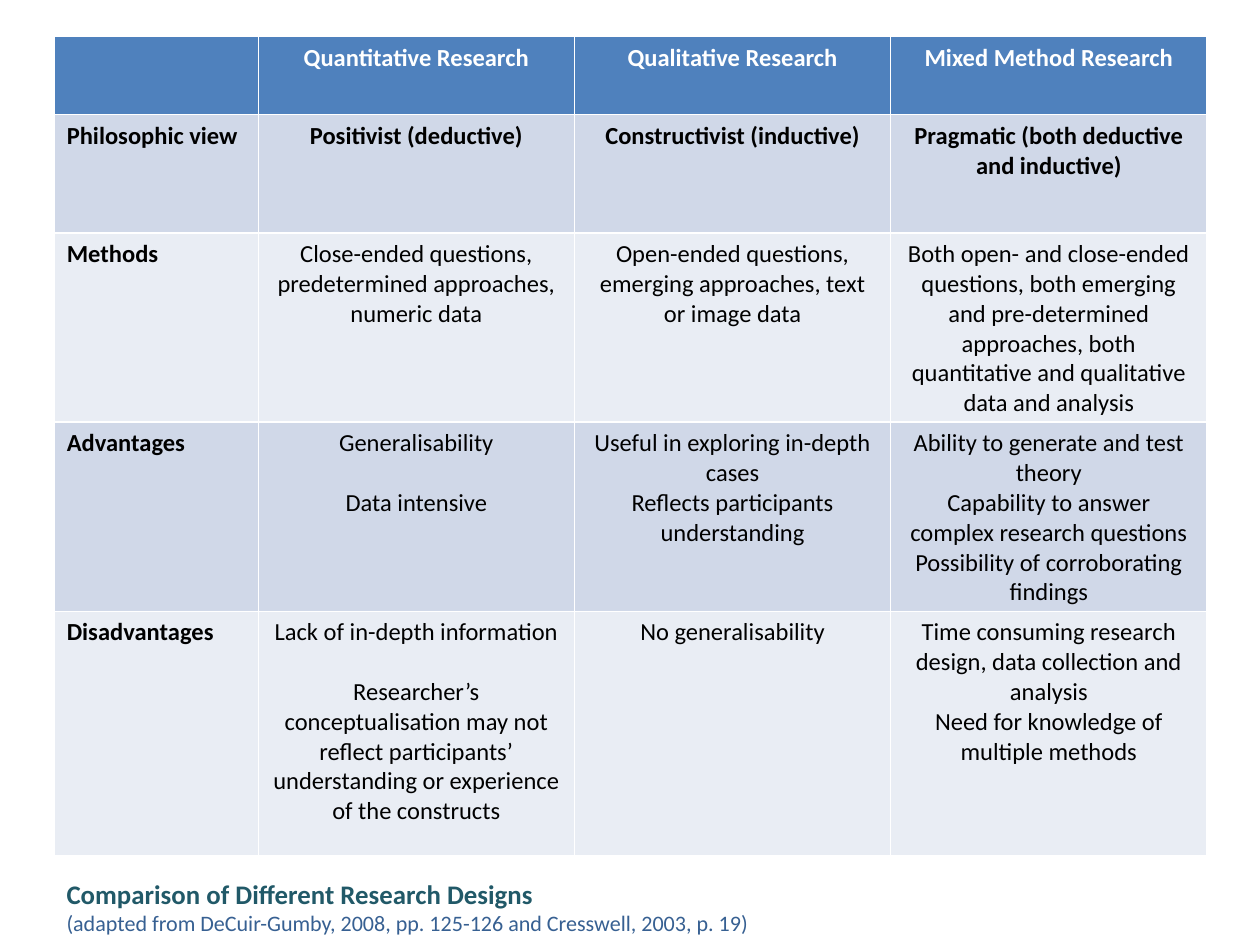
from pptx import Presentation
from pptx.dml.color import RGBColor
from pptx.enum.text import MSO_ANCHOR, PP_ALIGN
from pptx.util import Inches, Pt

HEADER_BLUE = RGBColor(0x4F, 0x81, 0xBD)
BAND_DARK = RGBColor(0xD0, 0xD8, 0xE8)
BAND_LIGHT = RGBColor(0xE9, 0xED, 0xF4)
WHITE = RGBColor(0xFF, 0xFF, 0xFF)
BLACK = RGBColor(0x00, 0x00, 0x00)
TITLE_TEAL = RGBColor(0x21, 0x59, 0x68)
SOURCE_BLUE = RGBColor(0x37, 0x60, 0x92)

LEFT = 0.43
TABLE_TOP = 0.29
COLUMN_WIDTHS = [1.62, 2.51, 2.51, 2.51]
ROW_HEIGHTS = [0.62, 0.94, 1.48, 1.48, 1.94]
LINE_GAP = 17  # points, one line of table text

# Each cell is a list of paragraphs.
COMPARISON = [
    [[], ["Quantitative Research"], ["Qualitative Research"], ["Mixed Method Research"]],
    [["Philosophic view"], ["Positivist (deductive)"], ["Constructivist (inductive)"],
     ["Pragmatic (both deductive and inductive)"]],
    [["Methods"],
     ["Close-ended questions, predetermined approaches, numeric data"],
     ["Open-ended questions, emerging approaches, text or image data"],
     ["Both open- and close-ended questions, both emerging and pre-determined "
      "approaches, both quantitative and qualitative data and analysis"]],
    [["Advantages"],
     ["Generalisability", "Data intensive"],
     ["Useful in exploring in-depth cases", "Reflects participants understanding"],
     ["Ability to generate and test theory",
      "Capability to answer complex research questions",
      "Possibility of corroborating findings"]],
    [["Disadvantages"],
     ["Lack of in-depth information",
      "Researcher’s conceptualisation may not reflect participants’ "
      "understanding or experience of the constructs"],
     ["No generalisability"],
     ["Time consuming research design, data collection and analysis",
      "Need for knowledge of multiple methods"]],
]


def write(frame, lines, size=14, color=BLACK, bold=False, align=PP_ALIGN.LEFT, gap=0):
    """Append lines as paragraphs, with gap points between them."""
    for line in lines:
        first = not frame.text
        paragraph = frame.paragraphs[0] if first else frame.add_paragraph()
        paragraph.alignment = align
        paragraph.space_before = Pt(0 if first else gap)
        run = paragraph.add_run()
        run.text = line
        run.font.name = "Calibri"
        run.font.size = Pt(size)
        run.font.bold = bold
        run.font.color.rgb = color


def row_fill(row):
    if row == 0:
        return HEADER_BLUE
    return BAND_DARK if row % 2 else BAND_LIGHT


def add_comparison(slide):
    """The default table style supplies the white rules between cells."""
    table = slide.shapes.add_table(
        len(ROW_HEIGHTS), len(COLUMN_WIDTHS), Inches(LEFT), Inches(TABLE_TOP),
        Inches(sum(COLUMN_WIDTHS)), Inches(sum(ROW_HEIGHTS))).table
    for column, width in zip(table.columns, COLUMN_WIDTHS):
        column.width = Inches(width)
    for row, height in zip(table.rows, ROW_HEIGHTS):
        row.height = Inches(height)
    for r, designs in enumerate(COMPARISON):
        for c, lines in enumerate(designs):
            cell = table.cell(r, c)
            cell.fill.solid()
            cell.fill.fore_color.rgb = row_fill(r)
            write(cell.text_frame, lines,
                  color=WHITE if r == 0 else BLACK,
                  bold=r < 2 or c == 0,
                  align=PP_ALIGN.CENTER if c else PP_ALIGN.LEFT,
                  gap=LINE_GAP if c == 1 else 0)


def add_caption(slide):
    caption = slide.shapes.add_textbox(
        Inches(LEFT), Inches(6.89), Inches(9.06), Inches(0.61)).text_frame
    caption.word_wrap = True
    caption.vertical_anchor = MSO_ANCHOR.MIDDLE
    write(caption, ["Comparison of Different Research Designs"],
          size=15.3, color=TITLE_TEAL, bold=True)
    write(caption, ["(adapted from DeCuir-Gumby, 2008, pp. 125-126 and Cresswell, 2003, p. 19)"],
          size=12.6, color=SOURCE_BLUE)


def main():
    presentation = Presentation()
    presentation.slide_width = Inches(10)
    presentation.slide_height = Inches(7.5)
    slide = presentation.slides.add_slide(presentation.slide_layouts[6])
    add_caption(slide)
    add_comparison(slide)
    presentation.save("out.pptx")


if __name__ == "__main__":
    main()
